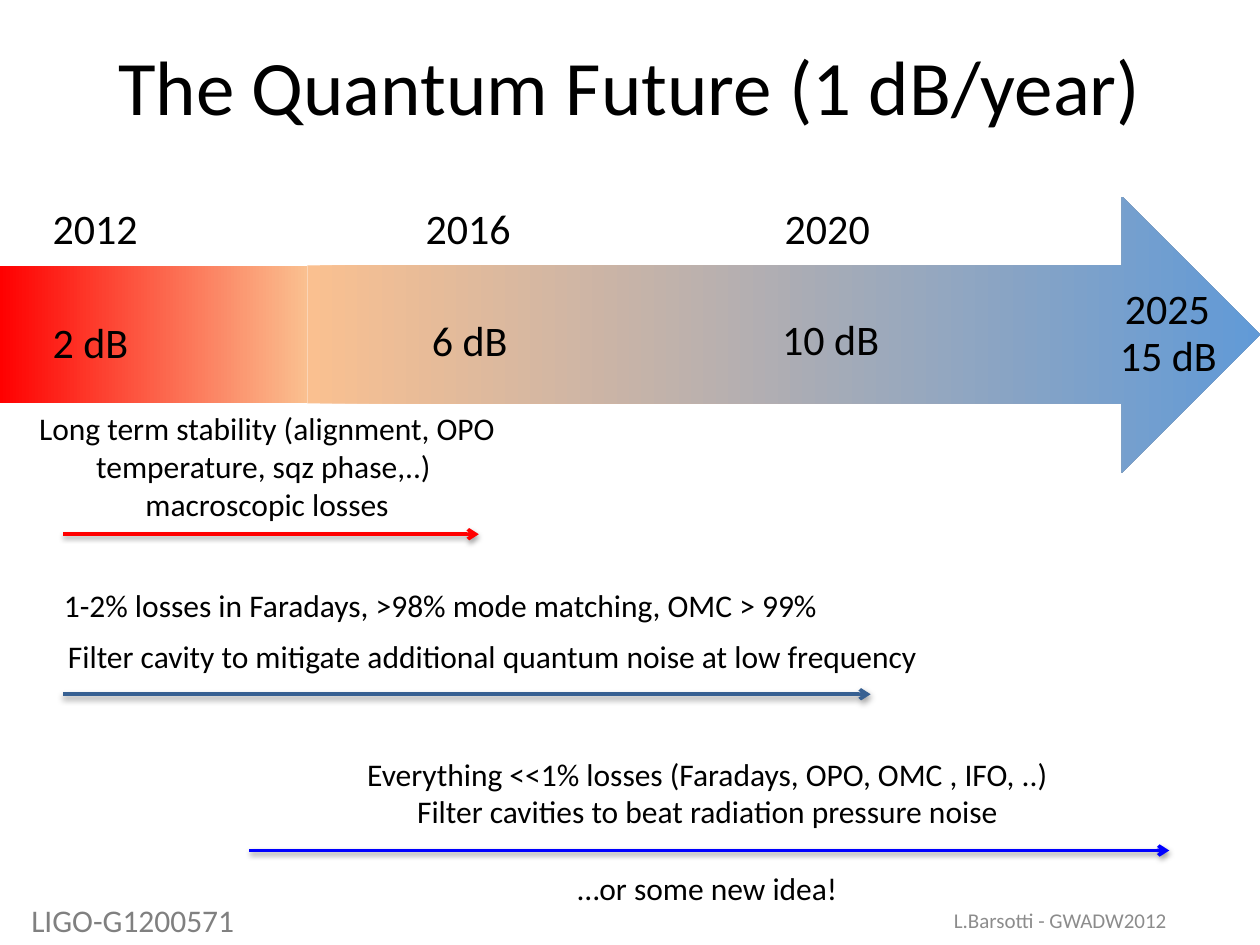
import pptx
import pptx.dml.color
import pptx.enum.shapes
import pptx.enum.text
import pptx.oxml
import pptx.oxml.ns
import pptx.util

Inches = pptx.util.Inches
Pt = pptx.util.Pt
SHAPES = pptx.enum.shapes.MSO_SHAPE
ALIGN = pptx.enum.text.PP_ALIGN
ANCHOR = pptx.enum.text.MSO_ANCHOR
TITLE_ONLY = 5

NS = pptx.oxml.ns.nsdecls("a")
ARROWHEAD = f'<a:tailEnd {NS} type="arrow"/>'
SOFT_SHADOW = (
    f'<a:effectLst {NS}><a:outerShdw blurRad="40000" dist="20000" dir="5400000" rotWithShape="0">'
    '<a:srgbClr val="000000"><a:alpha val="38000"/></a:srgbClr>'
    '</a:outerShdw></a:effectLst>'
)


def rgb(value):
    return pptx.dml.color.RGBColor.from_string(value)


def write(tf, text, size=18, color="000000", font="Calibri", align=ALIGN.LEFT):
    """Fill a text frame, one paragraph for each line of text."""
    for i, line in enumerate(text.split("\n")):
        p = tf.paragraphs[0] if i == 0 else tf.add_paragraph()
        p.alignment = align
        r = p.add_run()
        r.text = line
        r.font.name = font
        r.font.size = Pt(size)
        r.font.color.rgb = rgb(color)


class SlideBuilder:
    def __init__(self, prs):
        self.slide = prs.slides.add_slide(prs.slide_layouts[TITLE_ONLY])
        self.shapes = self.slide.shapes

    def title(self, text, x, y, w, h):
        sp = self.shapes.title
        sp.left, sp.top, sp.width, sp.height = map(Inches, (x, y, w, h))
        sp.text_frame.vertical_anchor = ANCHOR.MIDDLE
        write(sp.text_frame, text, size=44, align=ALIGN.CENTER)

    def gradient(self, kind, x, y, w, h, start, end):
        sp = self.shapes.add_shape(kind, *map(Inches, (x, y, w, h)))
        sp.shadow.inherit = False
        sp.line.fill.background()
        sp.fill.gradient()
        sp.fill.gradient_angle = 0
        for stop, color in zip(sp.fill.gradient_stops, (start, end)):
            stop.color.rgb = rgb(color)

    def text(self, text, x, y, w, h, anchor=ANCHOR.TOP, wrap=True, **style):
        sp = self.shapes.add_textbox(*map(Inches, (x, y, w, h)))
        tf = sp.text_frame
        tf.word_wrap = wrap
        tf.vertical_anchor = anchor
        write(tf, text, **style)
        return tf

    def arrow(self, x1, x2, y, color):
        line = self.shapes.add_connector(
            pptx.enum.shapes.MSO_CONNECTOR.STRAIGHT, *map(Inches, (x1, y, x2, y)))
        line.line.width = Pt(2)
        line.line.color.rgb = rgb(color)
        line.line._get_or_add_ln().append(pptx.oxml.parse_xml(ARROWHEAD))
        line._element.spPr.append(pptx.oxml.parse_xml(SOFT_SHADOW))


def main():
    prs = pptx.Presentation()
    prs.slide_width, prs.slide_height = Inches(10), Inches(7.5)
    s = SlideBuilder(prs)

    s.gradient(SHAPES.RIGHT_ARROW, 2.44, 1.56, 7.56, 2.19, "FAC090", "619AD7")
    s.gradient(SHAPES.RECTANGLE, 0, 2.11, 2.44, 1.09, "FF0000", "FAC090")
    s.title("The Quantum Future (1 dB/year)", 0.5, 0.05, 9, 1.25)

    milestones = [
        ("2012", 0.32, 1.56, "2 dB", 0.32, 2.46),
        ("2016", 3.28, 1.56, "6 dB", 3.33, 2.45),
        ("2020", 6.13, 1.56, "10 dB", 6.11, 2.44),
        ("2025", 8.83, 2.19, "15 dB", 8.79, 2.57),
    ]
    for year, year_x, year_y, level, level_x, level_y in milestones:
        s.text(year, year_x, year_y, 1.17, 0.5, size=24)
        s.text(level, level_x, level_y, 1.17, 0.5, size=24)

    s.text("Long term stability (alignment, OPO temperature, sqz phase,..) \n"
           "macroscopic losses", -0.02, 3.2, 4.28, 1.01, align=ALIGN.CENTER)
    s.text("1-2% losses in Faradays, >98% mode matching, OMC > 99% ",
           0.09, 4.6, 6.87, 0.4, align=ALIGN.CENTER)
    s.text("Filter cavity to mitigate additional quantum noise at low frequency",
           0.26, 5.01, 7.3, 0.4, align=ALIGN.CENTER)
    ideas = s.text("Everything <<1% losses (Faradays, OPO, OMC , IFO, ..)\n"
                   "Filter cavities to beat radiation pressure noise\n"
                   "…or some new idea!", 2.44, 5.94, 6.35, 1.62, align=ALIGN.CENTER)
    ideas.paragraphs[-1].space_before = Pt(22)

    for x1, x2, y, color in [(0.5, 3.8, 4.24, "FF0000"),
                             (0.5, 6.91, 5.51, "376092"),
                             (1.98, 9.28, 6.75, "0000FF")]:
        s.arrow(x1, x2, y, color)

    s.text("L.Barsotti - GWADW2012", 6.83, 7.1, 3.17, 0.4, anchor=ANCHOR.MIDDLE,
           size=12, color="8C8C8C", align=ALIGN.CENTER)
    s.text("LIGO-G1200571", 0.15, 7.1, 1.83, 0.4, wrap=False, color="808080")

    prs.save("out.pptx")


if __name__ == "__main__":
    main()
